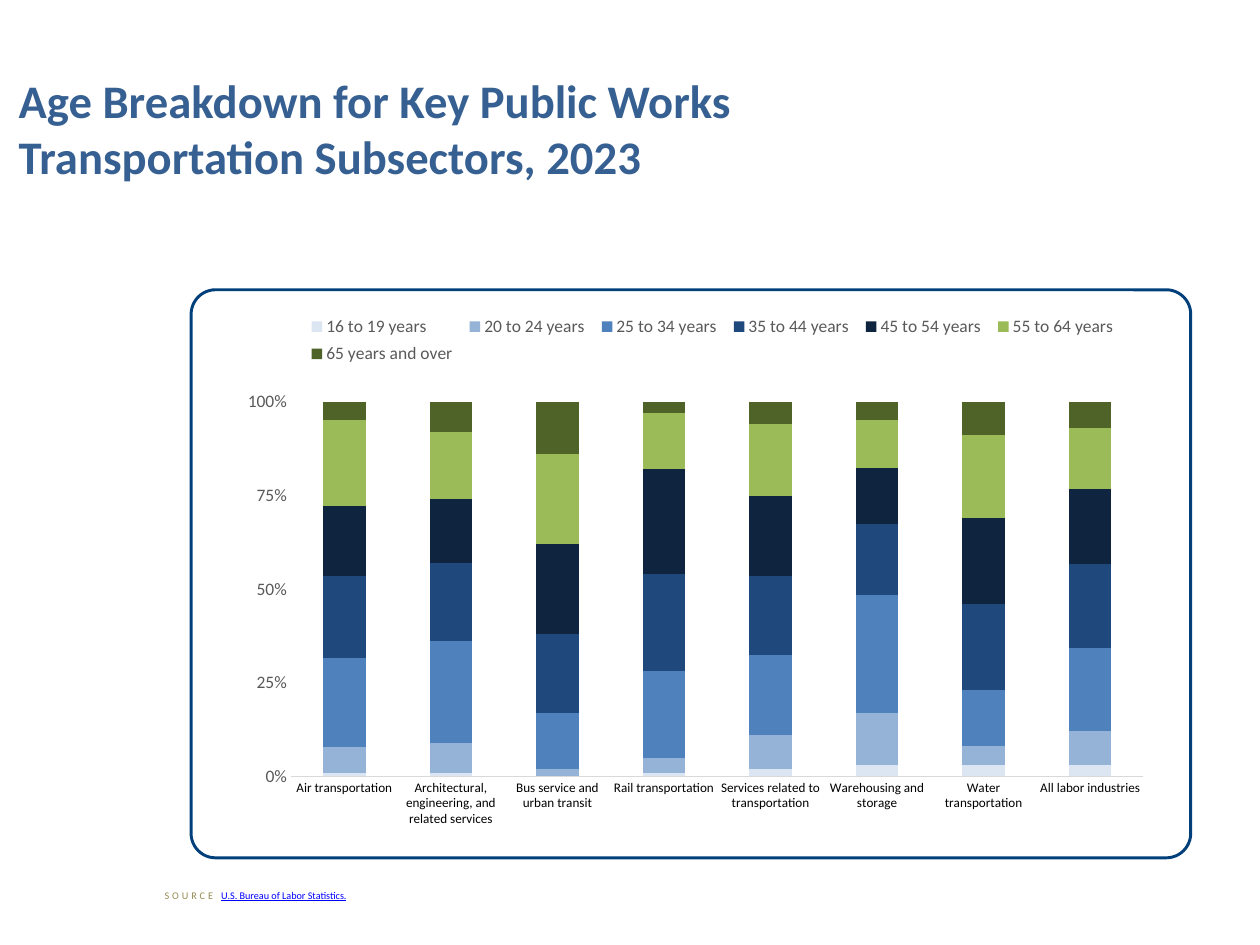
from lxml.etree import SubElement
from pptx import Presentation
from pptx.chart.data import CategoryChartData
from pptx.dml.color import RGBColor
from pptx.enum.chart import XL_CHART_TYPE, XL_LEGEND_POSITION, XL_TICK_MARK
from pptx.enum.shapes import MSO_SHAPE
from pptx.enum.text import MSO_ANCHOR
from pptx.oxml.ns import qn
from pptx.util import Inches, Pt

TITLE_BLUE = RGBColor(0x37, 0x60, 0x92)
FRAME_BLUE = RGBColor(0x00, 0x3F, 0x7A)
LINK_BLUE = RGBColor(0x00, 0x00, 0xFF)
KHAKI = RGBColor(0x94, 0x8A, 0x54)
BLACK = RGBColor(0x00, 0x00, 0x00)
GRAY = RGBColor(0x59, 0x59, 0x59)
AXIS_GRAY = RGBColor(0xD9, 0xD9, 0xD9)

SECTORS = [
    "Air transportation",
    "Architectural, engineering, and related services",
    "Bus service and urban transit",
    "Rail transportation",
    "Services related to transportation",
    "Warehousing and storage",
    "Water transportation",
    "All labor industries",
]
AGE_GROUPS = [
    ("16 to 19 years", RGBColor(0xDC, 0xE6, 0xF2), (1, 1, 0, 1, 2, 3, 3, 3)),
    ("20 to 24 years", RGBColor(0x95, 0xB3, 0xD7), (7, 8, 2, 4, 9, 14, 5, 9)),
    ("25 to 34 years", RGBColor(0x4F, 0x81, 0xBD), (24, 27, 15, 23, 21, 32, 15, 22)),
    ("35 to 44 years", RGBColor(0x1F, 0x49, 0x7D), (22, 21, 21, 26, 21, 19, 23, 22)),
    ("45 to 54 years", RGBColor(0x0F, 0x24, 0x3E), (19, 17, 24, 28, 21, 15, 23, 20)),
    ("55 to 64 years", RGBColor(0x9B, 0xBB, 0x59), (23, 18, 24, 15, 19, 13, 22, 16)),
    ("65 years and over", RGBColor(0x4F, 0x62, 0x28), (5, 8, 14, 3, 6, 5, 9, 7)),
]


def set_attrs(obj, **values):
    for name, value in values.items():
        setattr(obj, name, value)


class SlideBuilder:
    font_name = "Calibri"

    def __init__(self, slide):
        self.slide = slide

    def style_font(self, font, color, **values):
        set_attrs(font, name=self.font_name, **values)
        font.color.rgb = color

    def text(self, box, runs, anchor=MSO_ANCHOR.TOP):
        tf = self.slide.shapes.add_textbox(*map(Inches, box)).text_frame
        set_attrs(tf, word_wrap=True, vertical_anchor=anchor)
        p = tf.paragraphs[0]
        for words, color, spacing, values in runs:
            r = p.add_run()
            r.text = words
            self.style_font(r.font, color, **values)
            if spacing:
                r.font._element.set("spc", str(spacing * 100))

    def frame(self, box, radius, color, width):
        sp = self.slide.shapes.add_shape(MSO_SHAPE.ROUNDED_RECTANGLE, *map(Inches, box))
        sp.adjustments[0] = radius
        sp.shadow.inherit = False
        sp.fill.background()
        sp.line.color.rgb = color
        sp.line.width = Pt(width)

    def place(self, parent, index, box, inner=False):
        for old in parent.findall(qn("c:layout")):
            parent.remove(old)
        layout = SubElement(parent, qn("c:layout"))
        parent.insert(index, layout)
        manual = SubElement(layout, qn("c:manualLayout"))
        settings = [("layoutTarget", "inner")] if inner else []
        settings += [("xMode", "edge"), ("yMode", "edge")]
        settings += zip("xywh", box)
        for tag, value in settings:
            SubElement(manual, qn(f"c:{tag}")).set("val", str(value))

    def stacked_chart(self, box, categories, groups, plot_box, legend_box):
        data = CategoryChartData(number_format="0")
        data.categories = categories
        for name, _, values in groups:
            data.add_series(name, values)
        chart = self.slide.shapes.add_chart(
            XL_CHART_TYPE.COLUMN_STACKED_100, *map(Inches, box), data
        ).chart
        set_attrs(chart, has_title=False, has_legend=True)
        self.style_font(chart.font, BLACK, size=Pt(10))

        plot = chart.plots[0]
        set_attrs(plot, gap_width=150, overlap=100, vary_by_categories=False)
        for series, (_, color, _) in zip(plot.series, groups):
            series.format.fill.solid()
            series.format.fill.fore_color.rgb = color

        cat, val = chart.category_axis, chart.value_axis
        for axis, size, color in ((cat, 9, BLACK), (val, 12, GRAY)):
            set_attrs(
                axis,
                has_major_gridlines=False,
                major_tick_mark=XL_TICK_MARK.NONE,
                minor_tick_mark=XL_TICK_MARK.NONE,
            )
            self.style_font(axis.tick_labels.font, color, size=Pt(size))
        cat.format.line.color.rgb = AXIS_GRAY
        cat.format.line.width = Pt(0.75)
        val.format.line.fill.background()
        set_attrs(val, minimum_scale=0, maximum_scale=1, major_unit=0.25)
        set_attrs(val.tick_labels, number_format="0%", number_format_is_linked=False)

        legend = chart.legend
        set_attrs(legend, position=XL_LEGEND_POSITION.BOTTOM, include_in_layout=False)
        self.style_font(legend.font, GRAY, size=Pt(12))
        self.place(legend._element, 1, legend_box)
        self.place(cat._element.getparent(), 0, plot_box, inner=True)


def main():
    prs = Presentation()
    set_attrs(prs, slide_width=Inches(12), slide_height=Inches(9))
    s = SlideBuilder(prs.slides.add_slide(prs.slide_layouts[6]))
    s.text(
        (0.08, 0.32, 9, 1.8),
        [("Age Breakdown for Key Public Works Transportation Subsectors, 2023",
          TITLE_BLUE, 0, {"size": Pt(32), "bold": True})],
        MSO_ANCHOR.MIDDLE,
    )
    s.stacked_chart(
        (2.14, 2.89, 9.02, 5.85), SECTORS, AGE_GROUPS,
        plot_box=(0.07, 0.16, 0.9, 0.61), legend_box=(0.08, 0.01, 0.87, 0.1),
    )
    s.frame((1.82, 2.76, 9.52, 5.41), 0.043, FRAME_BLUE, 2)
    s.text(
        (1.47, 8.42, 8.39, 0.22),
        [("SOURCE ", KHAKI, 2, {"size": Pt(7)}),
         ("U.S. Bureau of Labor Statistics.", LINK_BLUE, 0,
          {"size": Pt(7), "underline": True})],
    )
    prs.save("out.pptx")


if __name__ == "__main__":
    main()
